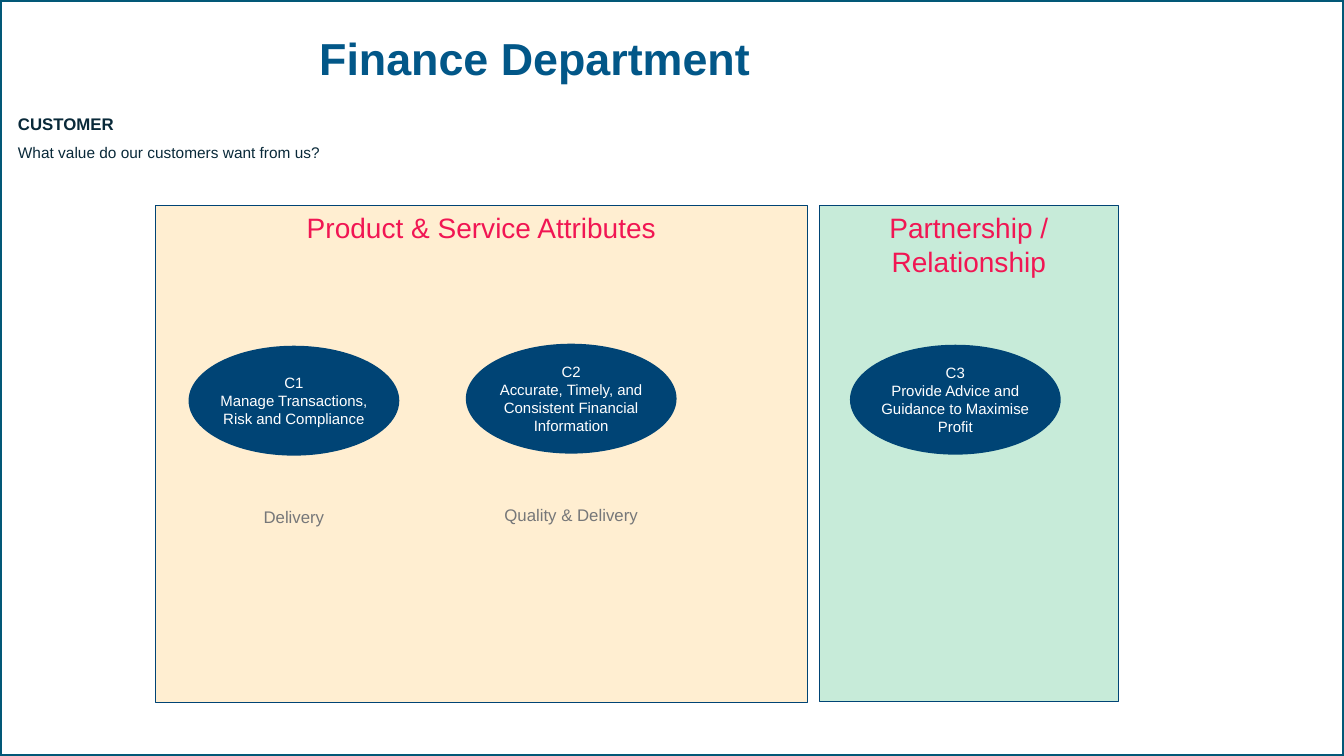
import lxml.etree
import pptx
import pptx.dml.color
import pptx.enum.shapes
import pptx.enum.text
import pptx.oxml.ns
import pptx.util

SHAPE = pptx.enum.shapes.MSO_SHAPE
ALIGN = pptx.enum.text.PP_ALIGN
ANCHOR = pptx.enum.text.MSO_ANCHOR
Inches = pptx.util.Inches
Pt = pptx.util.Pt

SLIDE_WIDTH, SLIDE_HEIGHT = 13.33, 7.5
GOAL_WIDTH, GOAL_HEIGHT = 2.09, 1.09


class Theme:
    font = "Arial"
    frame, title, heading = "025877", "025788", "F11653"
    navy, ink, grey, white = "004475", "092939", "767779", "FFFFFF"
    orange, green = "FFAA1B", "C7EBD9"
    title_size, heading_size, label_size = 32, 20, 12
    question_size, goal_size = 11, 10.7


def color(value):
    return pptx.dml.color.RGBColor.from_string(value)


def write(frame, lines, size, ink, align=ALIGN.CENTER, bold=False):
    """Fill a text frame with one paragraph per line."""
    frame.text = "\n".join(lines)
    for paragraph in frame.paragraphs:
        paragraph.alignment = align
        values = {"name": Theme.font, "size": Pt(size), "bold": bold}
        for name, value in values.items():
            setattr(paragraph.font, name, value)
        paragraph.font.color.rgb = color(ink)


def set_frame(frame, **values):
    for name, value in values.items():
        setattr(frame, name, value)


def add_box(slide, kind, box, fill=None, line=None, weight=0.75, opacity=100):
    shape = slide.shapes.add_shape(kind, *map(Inches, box))
    shape.shadow.inherit = False
    if fill:
        shape.fill.solid()
        shape.fill.fore_color.rgb = color(fill)
        if opacity < 100:
            tint = shape.fill._xPr.find(".//" + pptx.oxml.ns.qn("a:srgbClr"))
            alpha = lxml.etree.SubElement(tint, pptx.oxml.ns.qn("a:alpha"))
            alpha.set("val", str(opacity * 1000))
    else:
        shape.fill.background()
    if line:
        shape.line.color.rgb = color(line)
        shape.line.width = Pt(weight)
    else:
        shape.line.fill.background()
    return shape


def add_title(slide, box, text):
    title = slide.shapes.title
    for name, value in zip(("left", "top", "width", "height"), box):
        setattr(title, name, Inches(value))
    write(title.text_frame, [text], Theme.title_size, Theme.title, bold=True)
    set_frame(title.text_frame, vertical_anchor=ANCHOR.MIDDLE, word_wrap=True)
    title.text_frame.paragraphs[0].line_spacing = 0.9


def add_perspective(slide, box, name, question):
    """Perspective name with its guiding question below."""
    frame = slide.shapes.add_textbox(*map(Inches, box)).text_frame
    frame.word_wrap = True
    write(frame, [name, question], Theme.label_size, Theme.ink, ALIGN.LEFT)
    heading, detail = frame.paragraphs
    heading.font.bold = True
    detail.font.size = Pt(Theme.question_size)
    detail.space_before = Pt(6.5)


def add_goal(slide, left, top, lines, measure=None):
    """Goal ellipse, with an optional measure centred below it."""
    goal = add_box(slide, SHAPE.OVAL, (left, top, GOAL_WIDTH, GOAL_HEIGHT), Theme.navy)
    set_frame(goal.text_frame, margin_left=0, margin_right=0,
              vertical_anchor=ANCHOR.MIDDLE, word_wrap=True)
    write(goal.text_frame, lines, Theme.goal_size, Theme.white)
    if measure:
        label = slide.shapes.add_textbox(
            Inches(left), Inches(top + 1.55), Inches(GOAL_WIDTH), Inches(0.3))
        label.text_frame.word_wrap = True
        write(label.text_frame, [measure], Theme.label_size, Theme.grey)


def add_panel(slide, box, heading, fill, opacity, goals):
    """Headed panel; goals are placed from its top left corner."""
    panel = add_box(slide, SHAPE.RECTANGLE, box, fill, Theme.navy, opacity=opacity)
    set_frame(panel.text_frame, vertical_anchor=ANCHOR.TOP, word_wrap=True)
    write(panel.text_frame, [heading], Theme.heading_size, Theme.heading)
    for across, down, *content in goals:
        add_goal(slide, box[0] + across, box[1] + down, *content)


def main():
    presentation = pptx.Presentation()
    presentation.slide_width = Inches(SLIDE_WIDTH)
    presentation.slide_height = Inches(SLIDE_HEIGHT)
    slide = presentation.slides.add_slide(presentation.slide_layouts[5])

    # Slide frame and headings
    add_box(slide, SHAPE.RECTANGLE, (0, 0, SLIDE_WIDTH, SLIDE_HEIGHT),
            line=Theme.frame, weight=3)
    add_title(slide, (0.37, 0.28, 9.87, 0.64), "Finance Department")
    add_perspective(slide, (0.08, 1.08, 5.94, 0.58), "CUSTOMER",
                    "What value do our customers want from us?")

    # Value panels
    add_panel(slide, (8.13, 2.04, 2.96, 4.92), "Partnership / Relationship",
              Theme.green, 100,
              [(0.3, 1.38, ["C3", "Provide Advice and Guidance to Maximise Profit"])])
    add_panel(slide, (1.54, 2.04, 6.47, 4.93), "Product & Service Attributes",
              Theme.orange, 20,
              [(0.33, 1.39, ["C1", "Manage Transactions, Risk and Compliance"],
                "Delivery"),
               (3.08, 1.37, ["C2", "Accurate, Timely, and Consistent Financial Information"],
                "Quality & Delivery")])

    presentation.save("out.pptx")


if __name__ == "__main__":
    main()
